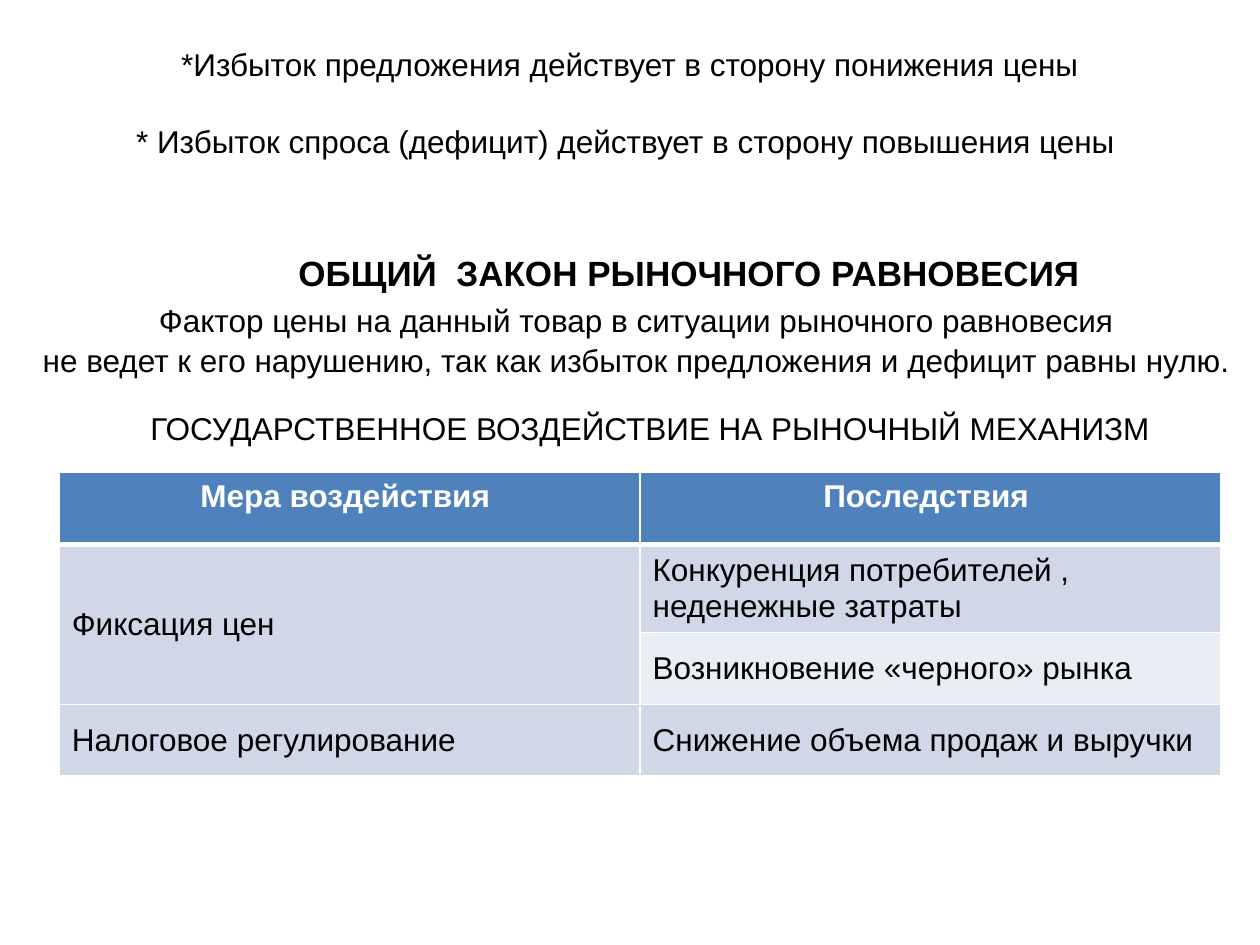
"""Build a slide on market equilibrium and state influence on prices."""
from typing import NamedTuple

from lxml import etree
from pptx import Presentation
from pptx import util as u
from pptx.dml.color import RGBColor
from pptx.enum import text as t
from pptx.oxml.ns import qn

BLACK = RGBColor(0x00, 0x00, 0x00)
WHITE = RGBColor(0xFF, 0xFF, 0xFF)
HEADER_BLUE = RGBColor(0x4F, 0x81, 0xBD)
BAND_DARK = RGBColor(0xD0, 0xD8, 0xE8)
BAND_LIGHT = RGBColor(0xE9, 0xED, 0xF4)
FONT = "Arial"
CENTER = t.PP_ALIGN.CENTER
LEFT = t.PP_ALIGN.LEFT


class Statement(NamedTuple):
    left: float
    top: float
    width: float
    height: float
    lines: tuple[str, ...]
    size: int = 18
    bold: bool = False
    align: t.PP_ALIGN = CENTER
    gap: float = 0
    wrap: bool = False


class Entry(NamedTuple):
    row: int
    column: int
    wording: str
    fill: RGBColor
    header: bool = False


STATEMENTS = (
    Statement(2.27, 1.95, 6.49, 0.43, ("ОБЩИЙ  ЗАКОН РЫНОЧНОГО РАВНОВЕСИЯ",),
              size=20, bold=True, align=LEFT),
    Statement(0.22, 2.34, 9.73, 1,
              ("Фактор цены на данный товар в ситуации рыночного равновесия ",
               "не ведет к его нарушению, так как избыток предложения и дефицит равны нулю. "),
              gap=1),
    Statement(0.47, 0.31, 9.06, 1.62,
              ("*Избыток предложения действует в сторону понижения цены",
               "* Избыток спроса (дефицит) действует в сторону повышения цены "),
              gap=22, wrap=True),
    Statement(1.09, 3.2, 8.21, 0.4,
              ("ГОСУДАРСТВЕННОЕ ВОЗДЕЙСТВИЕ НА РЫНОЧНЫЙ МЕХАНИЗМ ",)),
)
ENTRIES = (
    Entry(0, 0, "Мера воздействия ", HEADER_BLUE, True),
    Entry(0, 1, "Последствия ", HEADER_BLUE, True),
    Entry(1, 0, "Фиксация цен", BAND_DARK),
    Entry(1, 1, "Конкуренция потребителей , неденежные затраты", BAND_DARK),
    Entry(2, 1, "Возникновение «черного» рынка", BAND_LIGHT),
    Entry(3, 0, "Налоговое регулирование", BAND_DARK),
    Entry(3, 1, "Снижение объема продаж и выручки", BAND_DARK),
)
ROW_HEIGHTS = (0.57, 0.69, 0.57, 0.57)
COLUMN_WIDTH = 4.61


def add_line(paragraph, wording: str, size: int, bold: bool, color: RGBColor,
             align: t.PP_ALIGN) -> None:
    paragraph.alignment = align
    run = paragraph.add_run()
    run.text = wording
    run.font.name = FONT
    run.font.size = u.Pt(size)
    run.font.bold = bold
    run.font.color.rgb = color


def add_statement(slide, statement: Statement) -> None:
    box = slide.shapes.add_textbox(*(u.Inches(length) for length in statement[:4]))
    frame = box.text_frame
    frame.word_wrap = statement.wrap
    for index, line in enumerate(statement.lines):
        paragraph = frame.add_paragraph() if index else frame.paragraphs[0]
        if index:
            paragraph.space_before = u.Pt(statement.gap)
        add_line(paragraph, line, statement.size, statement.bold, BLACK, statement.align)


def add_borders(cell, top: float, bottom: float) -> None:
    properties = cell._tc.get_or_add_tcPr()
    for side, points in (("L", 1), ("R", 1), ("T", top), ("B", bottom)):
        border = etree.SubElement(properties, qn(f"a:ln{side}"), w=str(u.Pt(points)))
        fill = etree.SubElement(border, qn("a:solidFill"))
        etree.SubElement(fill, qn("a:srgbClr"), val=str(WHITE))


def fill_entry(table, entry: Entry) -> None:
    cell = table.cell(entry.row, entry.column)
    cell.fill.solid()
    cell.fill.fore_color.rgb = entry.fill
    cell.vertical_anchor = t.MSO_ANCHOR.TOP if entry.header else t.MSO_ANCHOR.MIDDLE
    add_line(cell.text_frame.paragraphs[0], entry.wording, 18, entry.header,
             WHITE if entry.header else BLACK, CENTER if entry.header else LEFT)


def add_measures(slide) -> None:
    table = slide.shapes.add_table(
        len(ROW_HEIGHTS), 2, u.Inches(0.47), u.Inches(3.75),
        u.Inches(2 * COLUMN_WIDTH), u.Inches(sum(ROW_HEIGHTS))).table
    for column in table.columns:
        column.width = u.Inches(COLUMN_WIDTH)
    for index, height in enumerate(ROW_HEIGHTS):
        table.rows[index].height = u.Inches(height)
        for column in range(2):
            add_borders(table.cell(index, column), 3 if index == 1 else 1,
                        3 if index == 0 else 1)
    table.cell(1, 0).merge(table.cell(2, 0))
    for entry in ENTRIES:
        fill_entry(table, entry)


def main() -> None:
    deck = Presentation()
    deck.slide_width, deck.slide_height = u.Inches(10), u.Inches(7.5)
    slide = deck.slides.add_slide(deck.slide_layouts[6])
    for statement in STATEMENTS:
        add_statement(slide, statement)
    add_measures(slide)
    deck.save("out.pptx")


if __name__ == "__main__":
    main()
